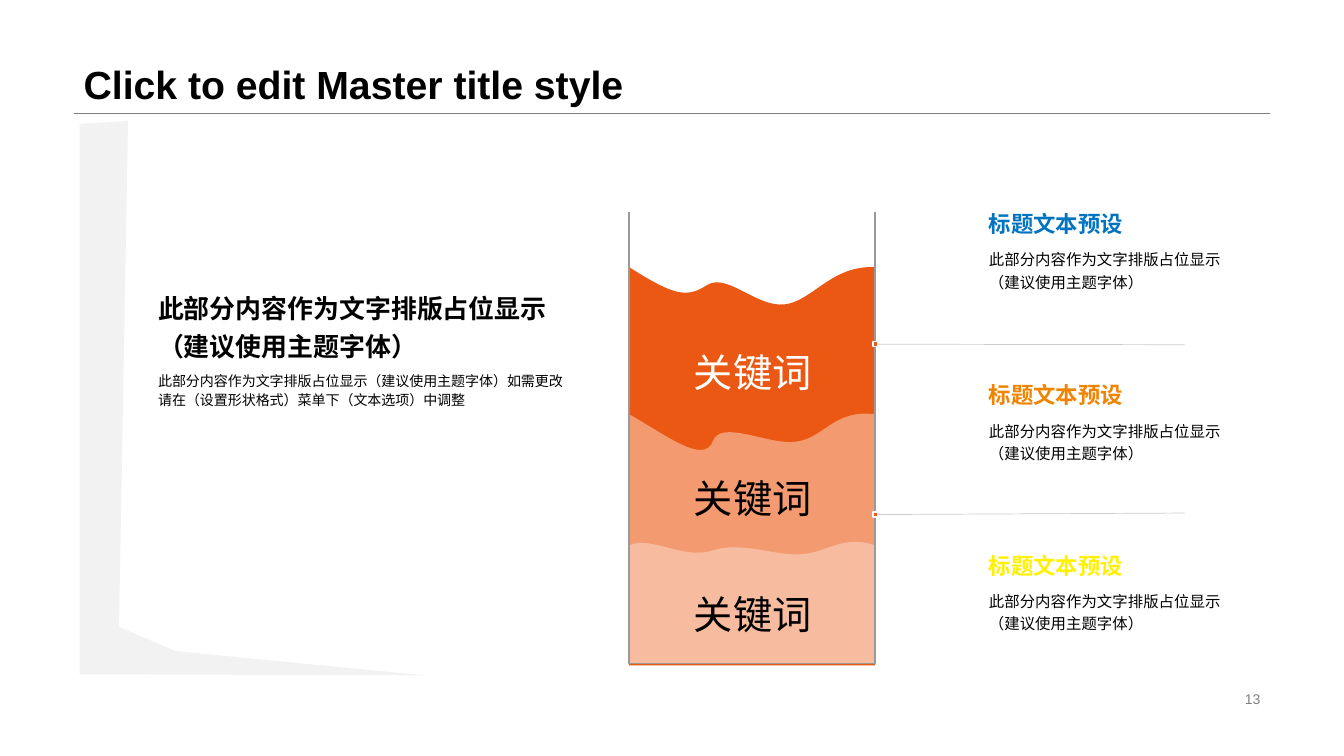
from lxml.etree import Element, SubElement
from pptx import Presentation
from pptx.dml.color import RGBColor
from pptx.enum.shapes import MSO_CONNECTOR as Connector, MSO_SHAPE as Preset
from pptx.enum.text import MSO_ANCHOR as Anchor, MSO_AUTO_SIZE as AutoSize, PP_ALIGN as Align
from pptx.oxml.ns import qn
from pptx.util import Inches, Pt

BLACK = RGBColor(0x00, 0x00, 0x00)
WHITE = RGBColor(0xFF, 0xFF, 0xFF)
GRAY = RGBColor(0x80, 0x80, 0x80)
FRAME_GRAY = RGBColor(0x99, 0x99, 0x99)
RULE_GRAY = RGBColor(0xCC, 0xCC, 0xCC)
PALE_GRAY = RGBColor(0xF2, 0xF2, 0xF2)
DEEP_ORANGE = RGBColor(0xEA, 0x58, 0x13)
MID_ORANGE = RGBColor(0xF3, 0x9A, 0x70)
LIGHT_ORANGE = RGBColor(0xF7, 0xBC, 0xA0)
BLUE = RGBColor(0x00, 0x74, 0xC1)
AMBER = RGBColor(0xF0, 0x83, 0x00)
YELLOW = RGBColor(0xFF, 0xF1, 0x00)

LEFT, RIGHT, TOP, BOTTOM = 6.24, 8.68, 2.1, 6.58
PLACEHOLDER_TEXT = "此部分内容作为文字排版占位显示\n（建议使用主题字体）"
DETAIL_TEXT = "此部分内容作为文字排版占位显示（建议使用主题字体）如需更改请在（设置形状格式）菜单下（文本选项）中调整"

WAVES = [
    (DEEP_ORANGE, 6.6, (LEFT, 2.65), [
        ((6.68, 2.93), (6.81, 2.96), (7.01, 2.83)),
        ((7.21, 2.7), (7.5, 3.05), (7.78, 3.02)),
        ((8.06, 2.99), (8.24, 2.63), (RIGHT, 2.65))]),
    (MID_ORANGE, BOTTOM, (LEFT, 4.11), [
        ((6.61, 4.32), (6.98, 4.61), (7.07, 4.38)),
        ((7.15, 4.15), (7.64, 4.43), (7.91, 4.38)),
        ((8.18, 4.34), (8.27, 4.06), (RIGHT, 4.11))]),
    (LIGHT_ORANGE, BOTTOM, (LEFT, 5.41), [
        ((6.45, 5.31), (6.79, 5.56), (7.07, 5.46)),
        ((7.36, 5.37), (7.66, 5.51), (7.93, 5.5)),
        ((8.2, 5.49), (8.35, 5.3), (RIGHT, 5.41))]),
]
KEYWORDS = [(3.37, WHITE), (4.62, BLACK), (5.77, BLACK)]
HEADINGS = [(2.05, BLUE), (3.75, AMBER), (5.44, YELLOW)]
LEADERS = [(3.39, 3.42), (5.08, 5.09)]
CORNER = [(0.79, 1.23), (1.27, 1.2), (1.18, 6.22), (1.74, 6.46), (4.21, 6.7), (0.79, 6.69)]


def format_text(shape, text, size, color, bold=False, align=Align.LEFT,
                anchor=Anchor.MIDDLE, spacing=1.0, wrap=True):
    frame = shape.text_frame
    frame.auto_size = AutoSize.NONE
    frame.word_wrap = wrap
    frame.vertical_anchor = anchor
    paragraph = frame.paragraphs[0]
    paragraph.text = text
    paragraph.alignment = align
    paragraph.line_spacing = spacing
    font = paragraph.font
    font.name = "Arial"
    font.size = Pt(size)
    font.bold = bold
    font.color.rgb = color


def add_text(slide, box, text, size, color, **options):
    shape = slide.shapes.add_textbox(*map(Inches, box))
    format_text(shape, text, size, color, **options)


def paint(shape, fill=None, line=None):
    shape.shadow.inherit = False
    if fill is None:
        shape.fill.background()
    else:
        shape.fill.solid()
        shape.fill.fore_color.rgb = fill
    if line is None:
        shape.line.fill.background()
    else:
        shape.line.color.rgb = line
        shape.line.width = Pt(1)


def add_outline(slide, points, fill=None, line=None, closed=True):
    start, *rest = [(Inches(x), Inches(y)) for x, y in points]
    builder = slide.shapes.build_freeform(*start)
    builder.add_line_segments(rest, close=closed)
    shape = builder.convert_to_shape()
    paint(shape, fill, line)
    return shape


def add_wave(slide, color, bottom, start, curves):
    ends = [curve[-1] for curve in curves]
    shape = add_outline(slide, [start, *ends, (RIGHT, bottom), (LEFT, bottom)], fill=color)
    segments = list(shape._element.iter(qn("a:lnTo")))
    for segment, curve in zip(segments, curves):
        bezier = Element(qn("a:cubicBezTo"))
        for x, y in curve:
            SubElement(bezier, qn("a:pt"), x=str(Inches(x) - shape.left),
                       y=str(Inches(y) - shape.top))
        segment.getparent().replace(segment, bezier)


def add_line(slide, start, end, color, width):
    line = slide.shapes.add_connector(Connector.STRAIGHT, *map(Inches, start + end))
    line.line.color.rgb = color
    line.line.width = Pt(width)
    SubElement(line._element.spPr, qn("a:effectLst"))
    return line


def add_leader(slide, marker_top, line_end):
    marker = slide.shapes.add_shape(
        Preset.RECTANGLE, Inches(8.66), Inches(marker_top), Inches(0.05), Inches(0.05))
    paint(marker, DEEP_ORANGE, WHITE)
    line = add_line(slide, (8.71, marker_top), (11.75, line_end), RULE_GRAY, 0.5)
    line.begin_connect(marker, 3)


def add_title(slide):
    title = slide.shapes.title
    title.left, title.top, title.width, title.height = map(Inches, (0.73, 0, 11.87, 1.12))
    format_text(title, "Click to edit Master title style", 28, BLACK, bold=True,
                anchor=Anchor.BOTTOM, spacing=0.9)


def add_vessel(slide):
    for wave in WAVES:
        add_wave(slide, *wave)
    add_outline(slide, [(RIGHT, TOP), (RIGHT, BOTTOM), (LEFT, BOTTOM), (LEFT, TOP)],
                line=FRAME_GRAY, closed=False)
    for top, color in KEYWORDS:
        add_text(slide, (6.64, top, 1.65, 0.64), "关键词", 28, color,
                 align=Align.CENTER, wrap=False)


def add_descriptions(slide):
    for top, color in HEADINGS:
        add_text(slide, (9.71, top, 2.82, 0.35), "标题文本预设", 16, color,
                 bold=True, anchor=Anchor.BOTTOM, wrap=False)
        add_text(slide, (9.71, top + 0.35, 2.82, 0.79), PLACEHOLDER_TEXT, 11, BLACK,
                 anchor=Anchor.TOP, spacing=1.2)


def main():
    presentation = Presentation()
    presentation.slide_width = Inches(13.33)
    presentation.slide_height = Inches(7.5)
    slide = presentation.slides.add_slide(presentation.slide_layouts[5])
    add_title(slide)
    add_line(slide, (0.73, 1.12), (12.6, 1.12), GRAY, 0.25)
    add_text(slide, (9.42, 6.82, 3.18, 0.23), "13", 10, GRAY, align=Align.RIGHT)
    add_vessel(slide)
    add_descriptions(slide)
    for marker_top, line_end in LEADERS:
        add_leader(slide, marker_top, line_end)
    add_outline(slide, CORNER, fill=PALE_GRAY)
    add_text(slide, (1.47, 2.8, 4.26, 0.83), PLACEHOLDER_TEXT, 18.5, BLACK,
             bold=True, spacing=1.2)
    add_text(slide, (1.47, 3.63, 4.26, 0.47), DETAIL_TEXT, 10, BLACK, spacing=1.1)
    presentation.save("out.pptx")


if __name__ == "__main__":
    main()
